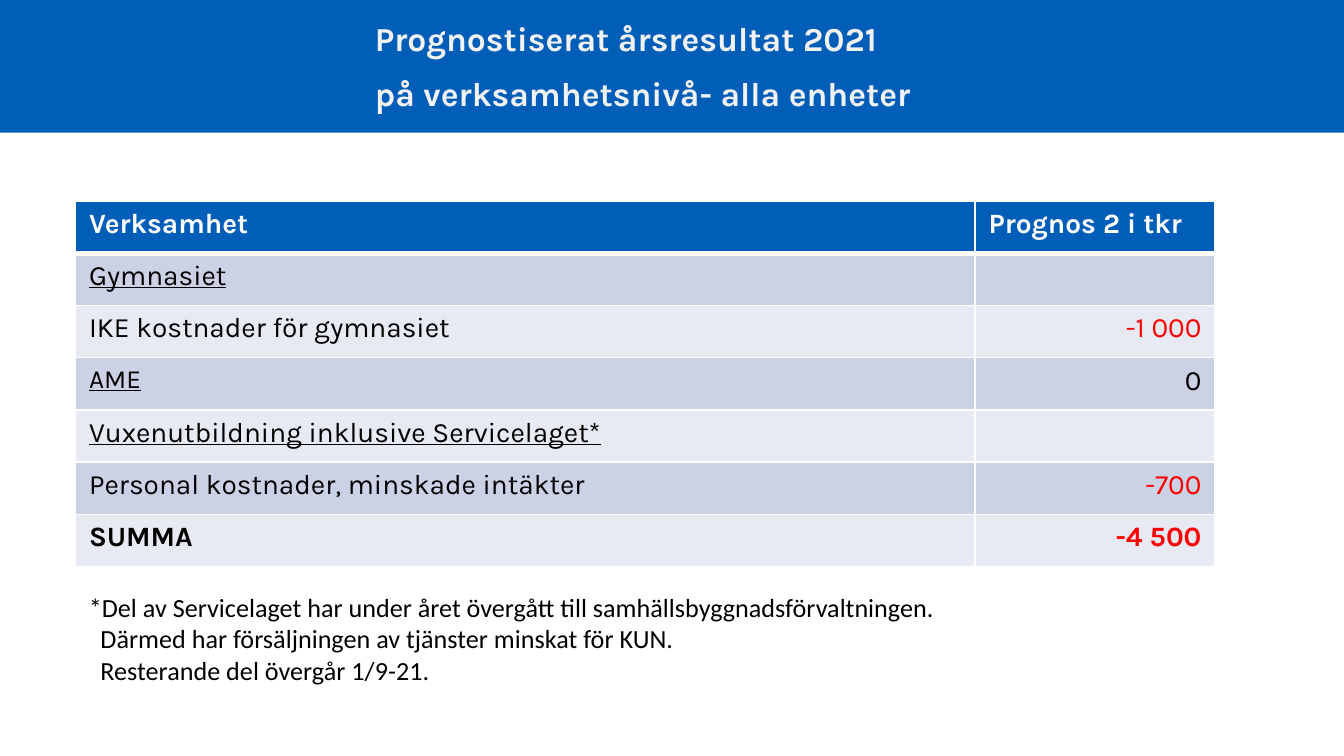
import pptx
import pptx.dml.color
import pptx.enum.shapes
import pptx.enum.text
import pptx.oxml
import pptx.oxml.ns
import pptx.util
from pptx.util import Cm, Pt

COLOURS = {
    "blue": "005EB8",
    "title": "F2F2F2",
    "white": "FFFFFF",
    "black": "000000",
    "red": "FF0000",
    "dark band": "CCD2E6",
    "light band": "E7EAF3",
}
LEFT, RIGHT = pptx.enum.text.PP_ALIGN.LEFT, pptx.enum.text.PP_ALIGN.RIGHT

TITLE_LINES = ["Prognostiserat årsresultat 2021", "på verksamhetsnivå- alla enheter"]
HEADINGS = ["Verksamhet", "Prognos 2 i tkr"]
# Label, label format, forecast
FORECASTS = [
    ("Gymnasiet", {"underline": True}, ""),
    ("IKE kostnader för gymnasiet", {}, "-1 000"),
    ("AME", {"underline": True, "size": Pt(14)}, "0"),
    ("Vuxenutbildning inklusive Servicelaget*", {"underline": True}, ""),
    ("Personal kostnader, minskade intäkter", {}, "-700"),
    ("SUMMA", {"bold": True}, "-4 500"),
]
NOTE_LINES = [
    "*Del av Servicelaget har under året övergått till samhällsbyggnadsförvaltningen.",
    "Därmed har försäljningen av tjänster minskat för KUN.",
    "Resterande del övergår 1/9-21.",
]


def rgb(name):
    return pptx.dml.color.RGBColor.from_string(COLOURS[name])


def add_text(paragraph, text, colour, **formats):
    run = paragraph.add_run()
    run.text = text
    for attribute, value in formats.items():
        setattr(run.font, attribute, value)
    run.font.color.rgb = rgb(colour)


def place(shape, left, top, width, height):
    shape.left, shape.top, shape.width, shape.height = map(Cm, (left, top, width, height))


def paragraphs_for(frame, lines):
    """Yield each line with its paragraph, starting with the existing one."""
    for index, line in enumerate(lines):
        yield index, line, frame.add_paragraph() if index else frame.paragraphs[0]


def add_banner(slide, width):
    banner = slide.shapes.add_shape(
        pptx.enum.shapes.MSO_SHAPE.RECTANGLE, 0, 0, width, Cm(2.51))
    banner.shadow.inherit = False
    banner.fill.solid()
    banner.fill.fore_color.rgb = rgb("blue")
    banner.line.fill.background()


def write_title(slide):
    title = slide.shapes.title
    slide.shapes._spTree.append(title._element)  # in front of the banner
    place(title, 6.83, 0.3, 11.23, 2.41)
    frame = title.text_frame
    frame.word_wrap = True
    frame.auto_size = pptx.enum.text.MSO_AUTO_SIZE.NONE
    frame.vertical_anchor = pptx.enum.text.MSO_ANCHOR.TOP
    for index, line, paragraph in paragraphs_for(frame, TITLE_LINES):
        paragraph.alignment = LEFT
        paragraph.line_spacing = 0.9
        paragraph.space_before = Pt(10 if index else 0)
        add_text(paragraph, line, "title", name="Karla", size=Pt(18), bold=True)


def set_borders(cell, bottom):
    properties = cell._tc.get_or_add_tcPr()
    widths = {"lnL": 1, "lnR": 1, "lnT": 1, "lnB": bottom}
    for position, (side, width) in enumerate(widths.items()):
        properties.insert(position, pptx.oxml.parse_xml(
            f'<a:{side} {pptx.oxml.ns.nsdecls("a")} w="{Pt(width)}"><a:solidFill>'
            f'<a:srgbClr val="{COLOURS["white"]}"/></a:solidFill></a:{side}>'))


def fill_cell(cell, text, fill, colour, alignment=LEFT, bottom=1, **formats):
    cell.fill.solid()
    cell.fill.fore_color.rgb = rgb(fill)
    set_borders(cell, bottom)
    paragraph = cell.text_frame.paragraphs[0]
    paragraph.alignment = alignment
    if text:
        font = {"name": "Karla", "size": Pt(15), "bold": False} | formats
        add_text(paragraph, text, colour, **font)
    else:
        # Keeps the empty row from growing
        paragraph._p.get_or_add_endParaRPr().set("sz", "1500")


def add_forecast_table(slide):
    row_count = len(FORECASTS) + 1
    table = slide.shapes.add_table(
        row_count, 2, Cm(1.43), Cm(3.8), Cm(21.53), Cm(6.91)).table
    table.columns[0].width, table.columns[1].width = Cm(17), Cm(4.53)
    for row in table.rows:
        row.height = int(Cm(6.91) / row_count)

    for column, heading in enumerate(HEADINGS):
        fill_cell(table.cell(0, column), heading, "blue", "white", bottom=3, bold=True)
    for row, (label, formats, forecast) in enumerate(FORECASTS, start=1):
        band = "dark band" if row % 2 else "light band"
        colour = "red" if forecast.startswith("-") else "black"
        fill_cell(table.cell(row, 0), label, band, "black", **formats)
        fill_cell(table.cell(row, 1), forecast, band, colour, RIGHT,
                  bold=formats.get("bold", False))
    # The header's thick lower line is also the first row's upper line
    for cell in table.rows[1].cells:
        cell._tc.tcPr.find(pptx.oxml.ns.qn("a:lnT")).set("w", str(Pt(3)))


def add_note(slide):
    note = slide.shapes.add_textbox(Cm(1.43), Cm(11.05), Cm(20.68), Cm(2.06))
    frame = note.text_frame
    frame.word_wrap = True
    frame.auto_size = pptx.enum.text.MSO_AUTO_SIZE.SHAPE_TO_FIT_TEXT
    for index, line, paragraph in paragraphs_for(frame, NOTE_LINES):
        if index:  # align with the text after the asterisk
            paragraph._p.get_or_add_pPr().set("marL", str(Cm(0.22)))
        add_text(paragraph, line, "black", name="Calibri", size=Pt(14))


def main():
    presentation = pptx.Presentation()
    presentation.slide_width, presentation.slide_height = Cm(25.4), Cm(14.29)
    slide = presentation.slides.add_slide(presentation.slide_layouts[5])
    add_banner(slide, presentation.slide_width)
    write_title(slide)
    add_forecast_table(slide)
    add_note(slide)
    presentation.save("out.pptx")


if __name__ == "__main__":
    main()
